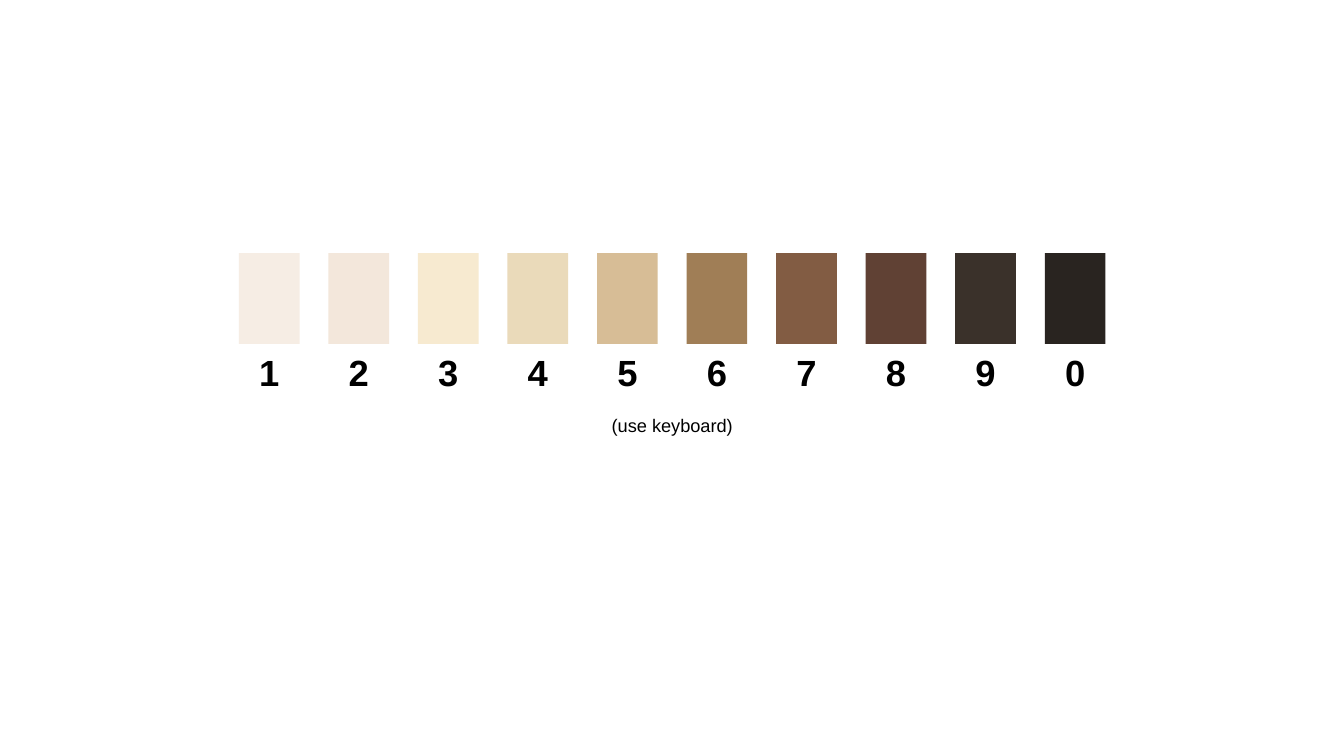
from dataclasses import dataclass

from pptx import Presentation
from pptx.dml.color import RGBColor as Color
from pptx.enum.shapes import MSO_SHAPE as Shape
from pptx.enum.text import PP_ALIGN as Align
from pptx.util import Cm, Pt

SKIN_TONES = [
    ("1", "F6EDE4"),
    ("2", "F3E7DB"),
    ("3", "F7EAD0"),
    ("4", "EADABA"),
    ("5", "D7BD96"),
    ("6", "A07E56"),
    ("7", "825C43"),
    ("8", "604134"),
    ("9", "3A312A"),
    ("0", "292420"),
]
HINT = "(use keyboard)"


@dataclass(frozen=True)
class Theme:
    font: str = "Arial"
    ink: str = "000000"
    key_size: int = 26
    hint_size: int = 13


THEME = Theme()
ROW_LEFT, ROW_RIGHT = 6.02, 27.86
SWATCH_TOP, SWATCH_WIDTH, SWATCH_HEIGHT = 6.38, 1.53, 2.29
KEY_TOP, KEY_WIDTH, KEY_HEIGHT = 8.71, 1.04, 1.37
HINT_TOP, HINT_WIDTH, HINT_HEIGHT = 10.31, 3.61, 0.81


def add_swatch(page, center, tone):
    swatch = page.shapes.add_shape(
        Shape.RECTANGLE, Cm(center - SWATCH_WIDTH / 2), Cm(SWATCH_TOP),
        Cm(SWATCH_WIDTH), Cm(SWATCH_HEIGHT))
    swatch.shadow.inherit = False
    swatch.fill.solid()
    swatch.fill.fore_color.rgb = Color.from_string(tone)
    swatch.line.fill.background()


def add_label(page, text, center, top, width, height, size, bold=False):
    box = page.shapes.add_textbox(
        Cm(center - width / 2), Cm(top), Cm(width), Cm(height))
    box.text_frame.word_wrap = False
    para = box.text_frame.paragraphs[0]
    para.alignment = Align.CENTER
    span = para.add_run()
    span.text = text
    span.font.name = THEME.font
    span.font.size = Pt(size)
    span.font.bold = bold
    span.font.color.rgb = Color.from_string(THEME.ink)


def main():
    deck = Presentation()
    deck.slide_width, deck.slide_height = Cm(33.87), Cm(19.05)
    page = deck.slides.add_slide(deck.slide_layouts[6])

    pitch = (ROW_RIGHT - ROW_LEFT - SWATCH_WIDTH) / (len(SKIN_TONES) - 1)
    for index, (key, tone) in enumerate(SKIN_TONES):
        center = ROW_LEFT + SWATCH_WIDTH / 2 + index * pitch
        add_swatch(page, center, tone)
        add_label(page, key, center, KEY_TOP, KEY_WIDTH, KEY_HEIGHT,
                  THEME.key_size, bold=True)

    add_label(page, HINT, (ROW_LEFT + ROW_RIGHT) / 2, HINT_TOP,
              HINT_WIDTH, HINT_HEIGHT, THEME.hint_size)
    deck.save("out.pptx")


if __name__ == "__main__":
    main()
